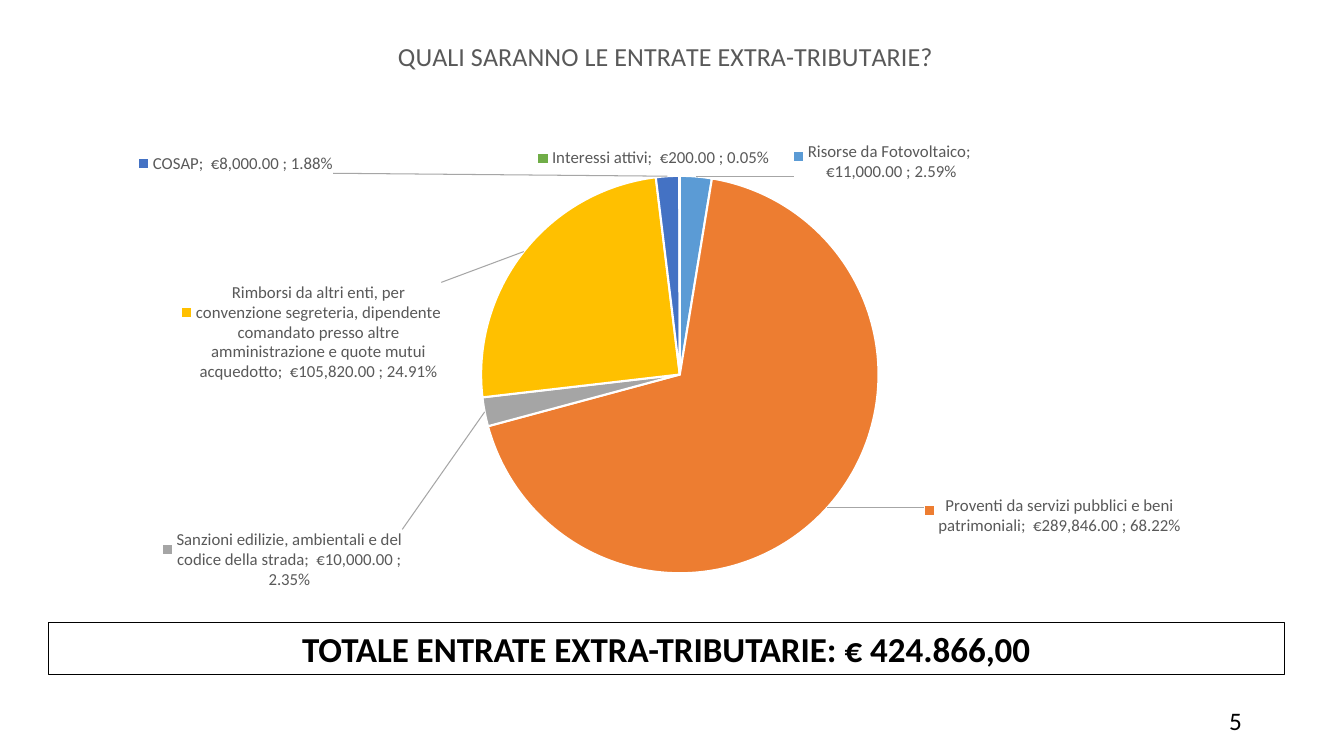
from copy import deepcopy
from pptx import Presentation
from pptx.chart.data import CategoryChartData
from pptx.dml.color import RGBColor
from pptx.enum.chart import XL_CHART_TYPE
from pptx.enum.shapes import MSO_SHAPE
from pptx.enum.text import MSO_ANCHOR, PP_ALIGN
from pptx.oxml import parse_xml
from pptx.util import Pt

TITLE = "QUALI SARANNO LE ENTRATE EXTRA-TRIBUTARIE?"
TOTAL = "TOTALE ENTRATE EXTRA-TRIBUTARIE: € 424.866,00"
PAGE_NUMBER = "5"
FONT = "Calibri"
COLORS = {
    "text": "000000", "label": "595959", "leader": "A6A6A6", "white": "FFFFFF",
    "sky": "5B9BD5", "orange": "ED7D31", "gray": "A5A5A5",
    "gold": "FFC000", "blue": "4472C4", "green": "70AD47",
}
# name, value, colour, then label shift across and down and label width and height in percent
REVENUES = [
    ("Risorse da Fotovoltaico", 11000, "sky", 15.2, 1.8, 15, 7),
    ("Proventi da servizi pubblici e beni patrimoniali", 289846, "orange", 7.5, -2.7, 19, 10),
    ("Sanzioni edilizie, ambientali e del codice della strada", 10000, "gray", -6.2, 19.5, 19, 10),
    ("Rimborsi da altri enti, per convenzione segreteria, dipendente comandato presso "
     "altre amministrazione e quote mutui acquedotto", 105820, "gold", -6.3, 22.5, 19, 20),
    ("COSAP", 8000, "blue", -34.9, 0.5, 17, 4),
    ("Interessi attivi", 200, "green", -2.1, -0.3, 20, 4),
]
NAMESPACES = (
    'xmlns:c="http://schemas.openxmlformats.org/drawingml/2006/chart" '
    'xmlns:a="http://schemas.openxmlformats.org/drawingml/2006/main" '
    'xmlns:c15="http://schemas.microsoft.com/office/drawing/2012/chart"'
)
LEFT, WIDTH = Pt(34.56), Pt(882.72)


def rgb(name):
    return RGBColor.from_string(COLORS[name])


def style_font(font, size, color, bold=False):
    font.name, font.size, font.bold = FONT, Pt(size), bold
    font.color.rgb = rgb(color)


def write_text(shape, text, size, alignment, bold=False):
    frame = shape.text_frame
    frame.word_wrap = True
    frame.vertical_anchor = MSO_ANCHOR.MIDDLE
    paragraph = frame.paragraphs[0]
    paragraph.alignment = alignment
    run = paragraph.add_run()
    run.text = text
    style_font(run.font, size, "text", bold)


def manual_layout(modes="", **percents):
    parts = "".join(f'<c:{key} val="{value / 100:.3f}"/>' for key, value in percents.items())
    return parse_xml(f"<c:layout {NAMESPACES}><c:manualLayout>{modes}{parts}</c:manualLayout></c:layout>")


def build_labels():
    labels = parse_xml(
        f'<c:dLbls {NAMESPACES}><c:numFmt formatCode="0.00%" sourceLinked="0"/>'
        '<c:spPr><a:noFill/><a:ln><a:noFill/></a:ln></c:spPr>'
        '<c:txPr><a:bodyPr wrap="square"/><a:p><a:pPr><a:defRPr sz="1200" b="0"><a:solidFill>'
        f'<a:srgbClr val="{COLORS["label"]}"/></a:solidFill><a:latin typeface="{FONT}"/></a:defRPr></a:pPr>'
        '<a:endParaRPr lang="it-IT"/></a:p></c:txPr><c:dLblPos val="bestFit"/>'
        '<c:showLegendKey val="1"/><c:showVal val="1"/><c:showCatName val="1"/><c:showSerName val="0"/>'
        '<c:showPercent val="1"/><c:showBubbleSize val="0"/><c:separator>; </c:separator></c:dLbls>'
    )
    shared = list(labels)
    for index, (_, _, _, across, down, width, height) in enumerate(REVENUES):
        label = parse_xml(f'<c:dLbl {NAMESPACES}><c:idx val="{index}"/></c:dLbl>')
        label.append(manual_layout(x=across, y=down))
        label.extend(deepcopy(shared))
        label.append(parse_xml(
            f'<c:extLst {NAMESPACES}><c:ext uri="{{CE6537A1-D6FC-4f65-9D91-7224C49458BB}}"><c15:layout>'
            f'<c:manualLayout><c:w val="{width / 100}"/><c:h val="{height / 100}"/></c:manualLayout>'
            '</c15:layout></c:ext></c:extLst>'
        ))
        labels.insert(index, label)
    labels.append(parse_xml(f'<c:showLeaderLines {NAMESPACES} val="1"/>'))
    labels.append(parse_xml(
        f'<c:leaderLines {NAMESPACES}><c:spPr><a:ln w="9525"><a:solidFill>'
        f'<a:srgbClr val="{COLORS["leader"]}"/></a:solidFill></a:ln></c:spPr></c:leaderLines>'
    ))
    return labels


def add_revenue_chart(slide):
    data = CategoryChartData(number_format='" €"#,##0.00" "')
    data.categories = [revenue[0] for revenue in REVENUES]
    data.add_series(TITLE, [revenue[1] for revenue in REVENUES])
    chart = slide.shapes.add_chart(
        XL_CHART_TYPE.PIE, LEFT, Pt(12.24), WIDTH, Pt(426.24), data
    ).chart
    style_font(chart.font, 10, "text")
    chart.has_legend = False
    chart.has_title = True
    title_run = chart.chart_title.text_frame.paragraphs[0].add_run()
    title_run.text = TITLE
    style_font(title_run.font, 18.6, "label")
    chart.chart_title.include_in_layout = False

    plot = chart.plots[0]
    plot.vary_by_categories = True
    series = plot.series[0]
    for index, revenue in enumerate(REVENUES):
        slice_format = series.points[index].format
        slice_format.fill.solid()
        slice_format.fill.fore_color.rgb = rgb(revenue[2])
        slice_format.line.color.rgb = rgb("white")
        slice_format.line.width = Pt(1.5)

    chart_xml = series._element.getroottree().getroot()
    prefix = "{http://schemas.openxmlformats.org/drawingml/2006/chart}"
    plot_area = next(chart_xml.iter(prefix + "plotArea"))
    title = next(chart_xml.iter(prefix + "title"))
    for parent in (plot_area, title):
        for layout in parent.findall(prefix + "layout"):
            parent.remove(layout)
    edges = '<c:xMode val="edge"/><c:yMode val="edge"/>'
    plot_area.insert(0, manual_layout(
        '<c:layoutTarget val="inner"/>' + edges, x=35, y=26.6, w=32.2, h=66.6))
    title.find(prefix + "tx").addnext(manual_layout(edges, x=27.9, y=2.8))
    series._element.find(prefix + "cat").addprevious(build_labels())


def main():
    presentation = Presentation()
    presentation.slide_width, presentation.slide_height = Pt(960), Pt(540)
    slide = presentation.slides.add_slide(presentation.slide_layouts[6])

    number_box = slide.shapes.add_textbox(Pt(678.24), Pt(500.4), Pt(216), Pt(28.8))
    write_text(number_box, PAGE_NUMBER, 18, PP_ALIGN.RIGHT)

    add_revenue_chart(slide)

    total_box = slide.shapes.add_shape(MSO_SHAPE.RECTANGLE, LEFT, Pt(444.6), WIDTH, Pt(37.44))
    total_box.shadow.inherit = False
    total_box.fill.background()
    total_box.line.color.rgb = rgb("text")
    total_box.line.width = Pt(0.75)
    write_text(total_box, TOTAL, 25, PP_ALIGN.CENTER, True)

    presentation.save("out.pptx")


if __name__ == "__main__":
    main()
